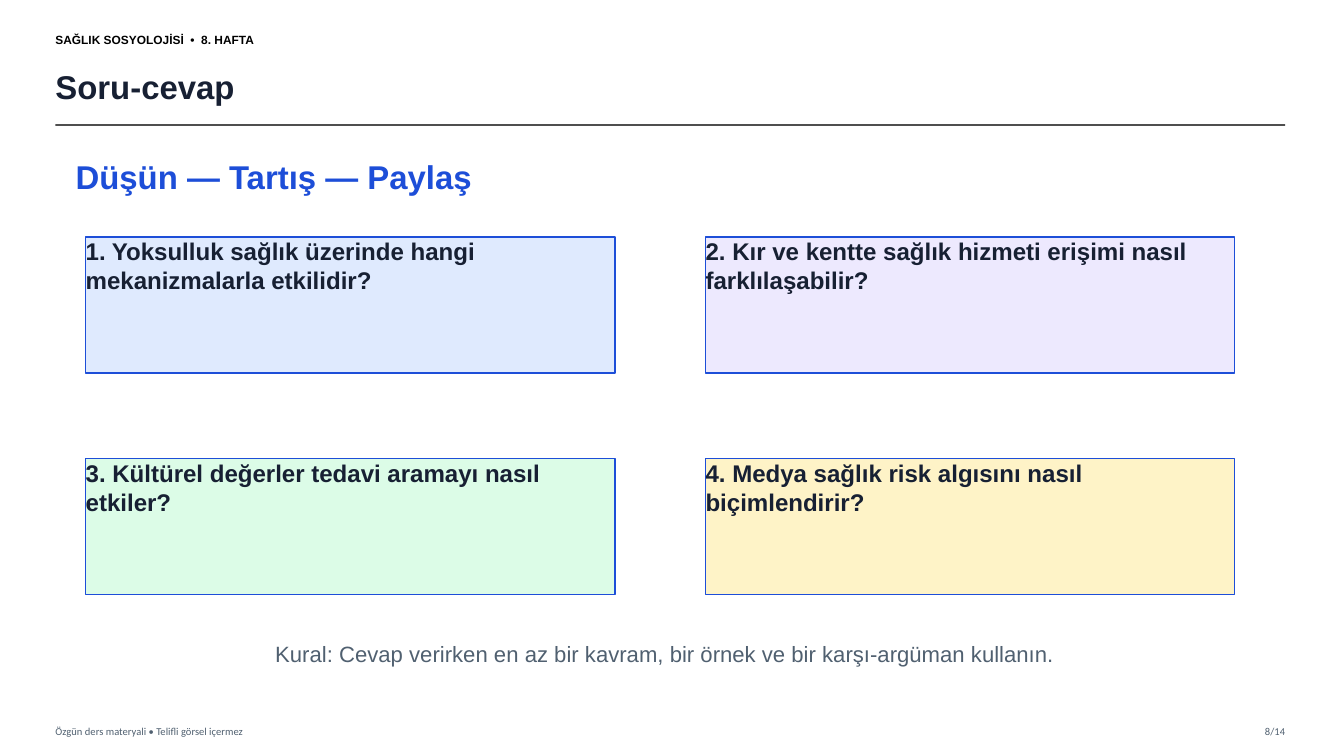
from lxml import etree
from pptx import Presentation
from pptx.dml.color import RGBColor
from pptx.enum import shapes, text
from pptx.oxml import ns
from pptx.util import Pt

INK = RGBColor(0x17, 0x20, 0x33)
BLUE = RGBColor(0x1D, 0x4E, 0xD8)
SLATE = RGBColor(0x50, 0x60, 0x70)
RULE = RGBColor(0x33, 0x33, 0x33)
BLACK = RGBColor(0x00, 0x00, 0x00)
WHITE = RGBColor(0xFF, 0xFF, 0xFF)
PALE_BLUE = RGBColor(0xDF, 0xEA, 0xFE)
PALE_VIOLET = RGBColor(0xED, 0xE9, 0xFE)
PALE_GREEN = RGBColor(0xDC, 0xFC, 0xE7)
PALE_YELLOW = RGBColor(0xFE, 0xF3, 0xC7)

LEFT, RIGHT = 39.6, 918
TOP, MIDDLE = text.MSO_ANCHOR.TOP, text.MSO_ANCHOR.MIDDLE
ALIGN = text.PP_ALIGN

QUESTIONS = [
    ("1. Yoksulluk sağlık üzerinde hangi mekanizmalarla etkilidir?", PALE_BLUE),
    ("2. Kır ve kentte sağlık hizmeti erişimi nasıl farklılaşabilir?", PALE_VIOLET),
    ("3. Kültürel değerler tedavi aramayı nasıl etkiler?", PALE_GREEN),
    ("4. Medya sağlık risk algısını nasıl biçimlendirir?", PALE_YELLOW),
]


def write(box, words, size, color, bold=False, font="Arial", align=ALIGN.LEFT, anchor=TOP):
    frame = box.text_frame
    frame.text = words
    frame.word_wrap = True
    frame.auto_size = text.MSO_AUTO_SIZE.NONE
    frame.vertical_anchor = anchor
    frame.margin_left = frame.margin_right = frame.margin_top = frame.margin_bottom = 0
    para = frame.paragraphs[0]
    para.alignment = align
    span = para.runs[0]
    span.font.name = font
    span.font.size = Pt(size)
    span.font.bold = bold
    span.font.color.rgb = color


def add_label(page, left, top, width, height, words, size, color, **style):
    box = page.shapes.add_textbox(Pt(left), Pt(top), Pt(width), Pt(height))
    write(box, words, size, color, **style)


def place_title(page, words):
    title = page.shapes.title
    title.left, title.top, title.width, title.height = Pt(LEFT), Pt(41.76), Pt(860.4), Pt(39.6)
    write(title, words, 23.5, INK, bold=True, anchor=MIDDLE)


def add_rule(page, top):
    rule = page.shapes.add_connector(
        shapes.MSO_CONNECTOR.STRAIGHT, Pt(LEFT), Pt(top), Pt(RIGHT), Pt(top))
    rule.line.color.rgb = RULE
    rule.line.width = Pt(1.2)
    color = rule.line._ln.find(".//" + ns.qn("a:srgbClr"))
    etree.SubElement(color, ns.qn("a:alpha"), val="85000")
    etree.SubElement(rule._element.spPr, ns.qn("a:effectLst"))


def add_card(page, left, top, words, fill):
    card = page.shapes.add_shape(
        shapes.MSO_SHAPE.RECTANGLE, Pt(left), Pt(top), Pt(378), Pt(97.2))
    card.shadow.inherit = False
    card.fill.solid()
    card.fill.fore_color.rgb = fill
    card.line.color.rgb = BLUE
    card.line.width = Pt(1)
    write(card, words, 17.2, INK, bold=True)


def main():
    deck = Presentation()
    deck.slide_width, deck.slide_height = Pt(960), Pt(540)
    page = deck.slides.add_slide(deck.slide_layouts[5])
    page.background.fill.solid()
    page.background.fill.fore_color.rgb = WHITE

    add_label(page, LEFT, 18, 259.2, 20.16, "SAĞLIK SOSYOLOJİSİ  •  8. HAFTA",
              8.5, BLACK, bold=True, anchor=MIDDLE)
    place_title(page, "Soru-cevap")
    add_rule(page, 89.28)
    add_label(page, LEFT, 514.08, 432, 15.84, "Özgün ders materyali • Telifli görsel içermez",
              7.5, SLATE, font="Calibri", anchor=MIDDLE)
    add_label(page, 871.2, 514.08, 46.8, 15.84, "8/14",
              7.5, SLATE, font="Calibri", align=ALIGN.RIGHT, anchor=MIDDLE)

    add_label(page, 54, 111.6, 410.4, 36, "Düşün — Tartış — Paylaş", 23.5, BLUE, bold=True)
    for index, (question, fill) in enumerate(QUESTIONS):
        row, column = divmod(index, 2)
        add_card(page, 61.2 + column * 442.8, 169.2 + row * 158.4, question, fill)
    add_label(page, 72, 457.2, 806.4, 25.2,
              "Kural: Cevap verirken en az bir kavram, bir örnek ve bir karşı-argüman kullanın.",
              15.8, SLATE, align=ALIGN.CENTER)

    deck.save("out.pptx")


if __name__ == "__main__":
    main()
